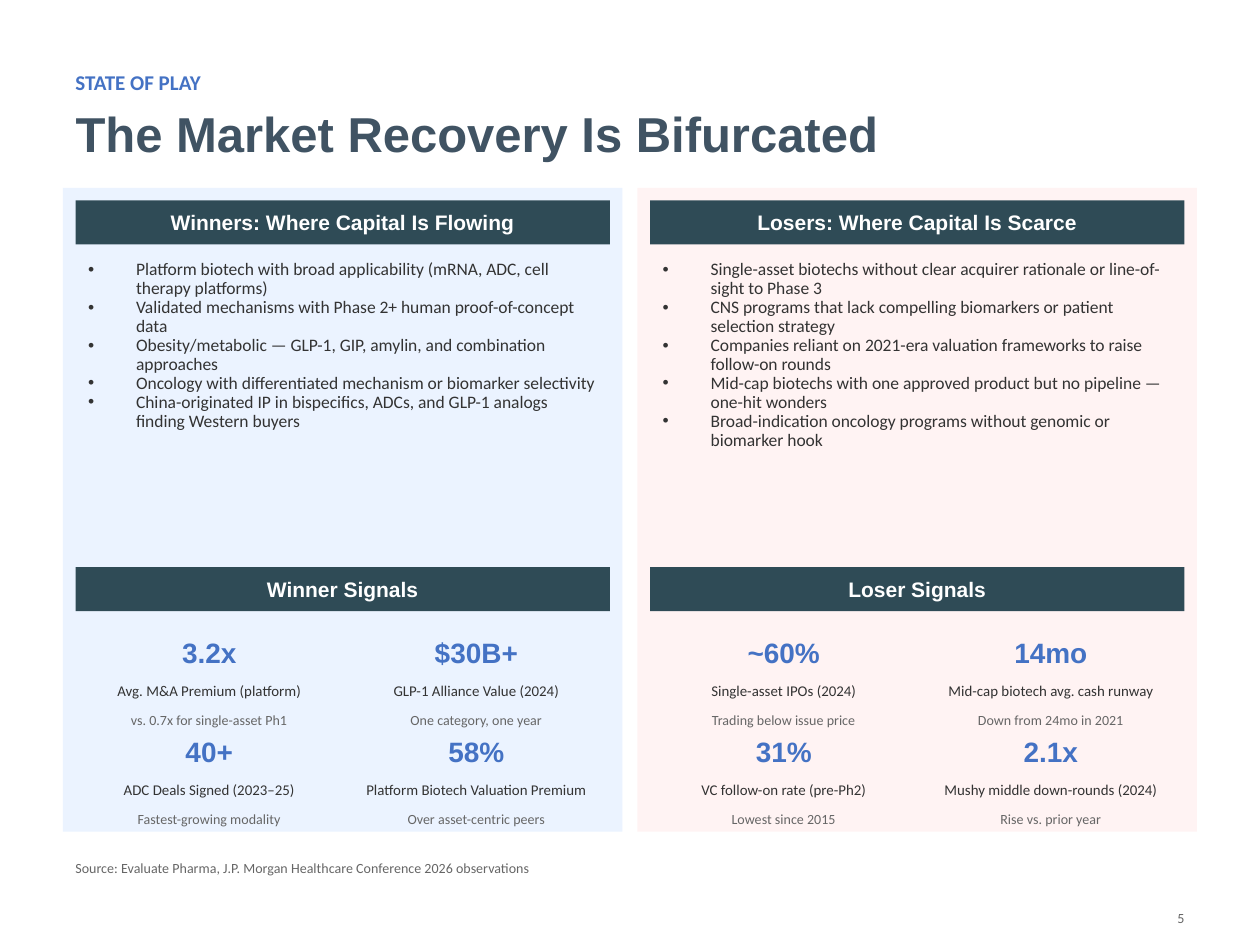
from pptx import Presentation
from pptx.dml.color import RGBColor
from pptx.enum.shapes import MSO_SHAPE
from pptx.enum.text import MSO_ANCHOR as Anchor, MSO_AUTO_SIZE as AutoSize, PP_ALIGN as Align
from pptx.oxml.xmlchemy import OxmlElement
from pptx.util import Inches, Pt

KICKER = "STATE OF PLAY"
TITLE = "The Market Recovery Is Bifurcated"
SOURCE = "Source: Evaluate Pharma, J.P. Morgan Healthcare Conference 2026 observations"
PAGE_NUMBER = "5"
COLUMNS = [
    {
        "tint": "EBF3FF",
        "heading": "Winners: Where Capital Is Flowing",
        "points": [
            "Platform biotech with broad applicability (mRNA, ADC, cell therapy platforms)",
            "Validated mechanisms with Phase 2+ human proof-of-concept data",
            "Obesity/metabolic — GLP-1, GIP, amylin, and combination approaches",
            "Oncology with differentiated mechanism or biomarker selectivity",
            "China-originated IP in bispecifics, ADCs, and GLP-1 analogs finding Western buyers",
        ],
        "signals_heading": "Winner Signals",
        "signals": [
            ("3.2x", "Avg. M&A Premium (platform)", "vs. 0.7x for single-asset Ph1"),
            ("$30B+", "GLP-1 Alliance Value (2024)", "One category, one year"),
            ("40+", "ADC Deals Signed (2023–25)", "Fastest-growing modality"),
            ("58%", "Platform Biotech Valuation Premium", "Over asset-centric peers"),
        ],
    },
    {
        "tint": "FFF3F3",
        "heading": "Losers: Where Capital Is Scarce",
        "points": [
            "Single-asset biotechs without clear acquirer rationale or line-of-sight to Phase 3",
            "CNS programs that lack compelling biomarkers or patient selection strategy",
            "Companies reliant on 2021-era valuation frameworks to raise follow-on rounds",
            "Mid-cap biotechs with one approved product but no pipeline — one-hit wonders",
            "Broad-indication oncology programs without genomic or biomarker hook",
        ],
        "signals_heading": "Loser Signals",
        "signals": [
            ("~60%", "Single-asset IPOs (2024)", "Trading below issue price"),
            ("14mo", "Mid-cap biotech avg. cash runway", "Down from 24mo in 2021"),
            ("31%", "VC follow-on rate (pre-Ph2)", "Lowest since 2015"),
            ("2.1x", "Mushy middle down-rounds (2024)", "Rise vs. prior year"),
        ],
    },
]

BLUE, SLATE, TEAL = "4472C4", "405363", "2F4B56"
INK, GREY, WHITE = "333333", "666666", "FFFFFF"
HEAD_FONT, BODY_FONT = "Arial", "Calibri"

MARGIN, PANEL_TOP, PANEL_W, PANEL_H = 0.5, 1.49, 4.44, 5.11
COLUMN_STEP, PAD = 4.56, 0.1
INNER_W = PANEL_W - 2 * PAD
SIGNAL_W, SIGNAL_TOP, SIGNAL_STEP = INNER_W / 2, 4.93, 0.785
# Offset and height of each line of a signal, then its style
SIGNAL_LINES = [
    (0, 0.43, dict(size=16, color=BLUE, font=HEAD_FONT, bold=True, anchor=Anchor.BOTTOM)),
    (0.43, 0.23, dict(size=8.5, color=INK)),
    (0.67, 0.12, dict(size=8, color=GREY)),
]


def rgb(hex_color):
    return RGBColor.from_string(hex_color)


def write(shape, lines, size, color, font=BODY_FONT, bold=False,
          align=Align.LEFT, anchor=Anchor.TOP):
    """Fill a shape with one formatted paragraph per line."""
    frame = shape.text_frame
    frame.word_wrap = True
    frame.auto_size = AutoSize.NONE
    frame.vertical_anchor = anchor
    for i, line in enumerate(lines):
        paragraph = frame.add_paragraph() if i else frame.paragraphs[0]
        paragraph.alignment = align
        paragraph.space_before = Pt(0)
        run = paragraph.add_run()
        run.text = line
        run.font.name, run.font.size, run.font.bold = font, Pt(size), bold
        run.font.color.rgb = rgb(color)


def place(shape, *box):
    shape.left, shape.top, shape.width, shape.height = map(Inches, box)


def add_text(text, *box, **style):
    write(slide.shapes.add_textbox(*map(Inches, box)), [text], **style)


def add_rect(fill, *box):
    rect = slide.shapes.add_shape(MSO_SHAPE.RECTANGLE, *map(Inches, box))
    rect.shadow.inherit = False
    rect.fill.solid()
    rect.fill.fore_color.rgb = rgb(fill)
    rect.line.fill.background()
    return rect


def add_banner(text, left, top):
    write(add_rect(TEAL, left, top, INNER_W, 0.35), [text], 12, WHITE, HEAD_FONT,
          bold=True, align=Align.CENTER, anchor=Anchor.MIDDLE)


def set_bullets(body):
    for paragraph in body.text_frame.paragraphs:
        paragraph.line_spacing = 0.9
        properties = paragraph._p.get_or_add_pPr()
        properties.set("marL", str(Inches(0.38)))
        properties.set("indent", str(-Inches(0.38)))
        bullet = OxmlElement("a:buChar")
        bullet.set("char", "•")
        properties.append(bullet)


def add_column(column, body, panel_left):
    left = panel_left + PAD
    add_rect(column["tint"], panel_left, PANEL_TOP, PANEL_W, PANEL_H)
    add_banner(column["heading"], left, PANEL_TOP + PAD)
    place(body, left, 2.02, INNER_W, 2.36)
    write(body, column["points"], 10, INK)
    set_bullets(body)
    slide.shapes._spTree.append(body._element)  # bring the list in front of its panel
    add_banner(column["signals_heading"], left, 4.5)
    for i, signal in enumerate(column["signals"]):
        row, col = divmod(i, 2)
        for text, (offset, height, style) in zip(signal, SIGNAL_LINES):
            add_text(text, left + col * SIGNAL_W, SIGNAL_TOP + row * SIGNAL_STEP + offset,
                     SIGNAL_W, height, align=Align.CENTER, **style)


prs = Presentation()
prs.slide_width, prs.slide_height = Inches(10), Inches(7.5)
two_content = prs.slide_layouts[3]
slide = prs.slides.add_slide(two_content)
title, *bodies = slide.placeholders

add_text(KICKER, MARGIN, 0.5, 9, 0.27, size=12, color=BLUE, bold=True)
place(title, MARGIN, 0.77, 9, 0.62)
write(title, [TITLE], 28, SLATE, HEAD_FONT, bold=True)
add_text(SOURCE, MARGIN, 6.65, 9, 0.35, size=8, color=GREY, anchor=Anchor.BOTTOM)
for i, (column, body) in enumerate(zip(COLUMNS, bodies)):
    add_column(column, body, MARGIN + i * COLUMN_STEP)
add_text(PAGE_NUMBER, 9, 7.15, 0.5, 0.25, size=8, color=GREY,
         align=Align.RIGHT, anchor=Anchor.BOTTOM)

prs.save("out.pptx")
